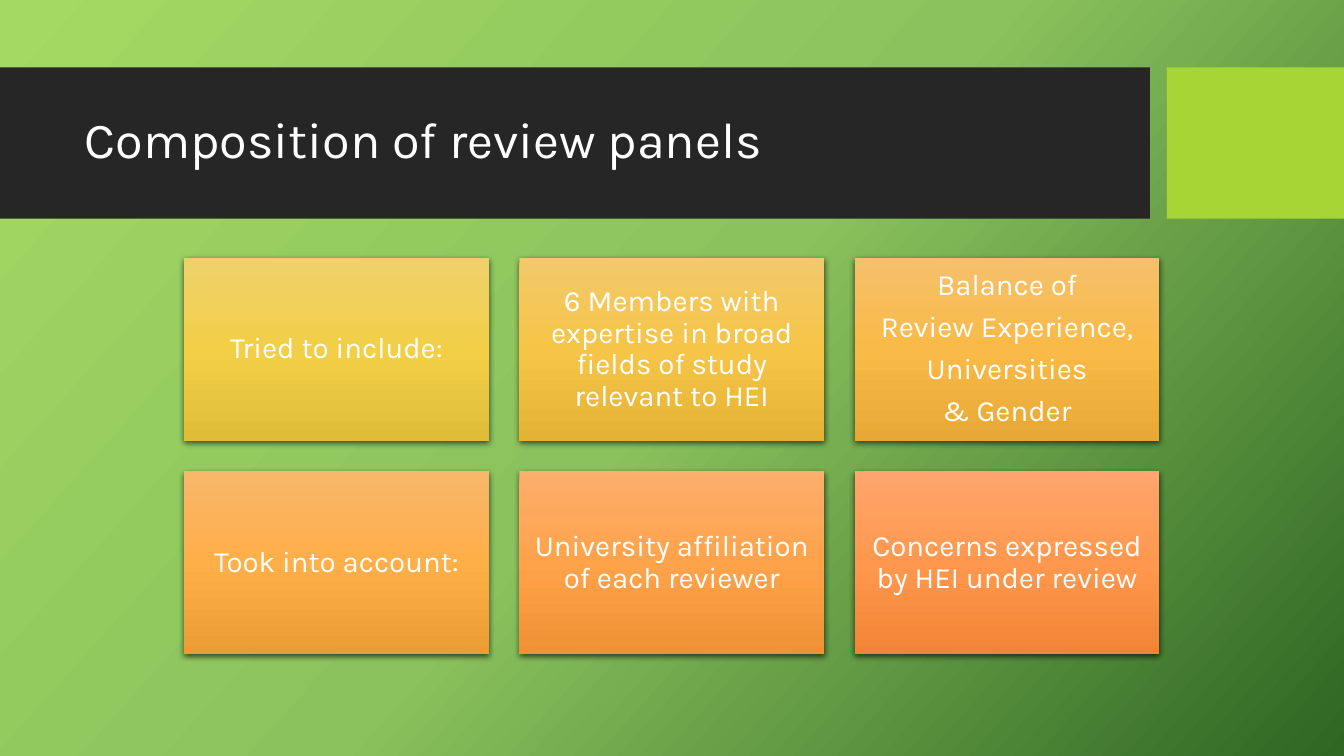
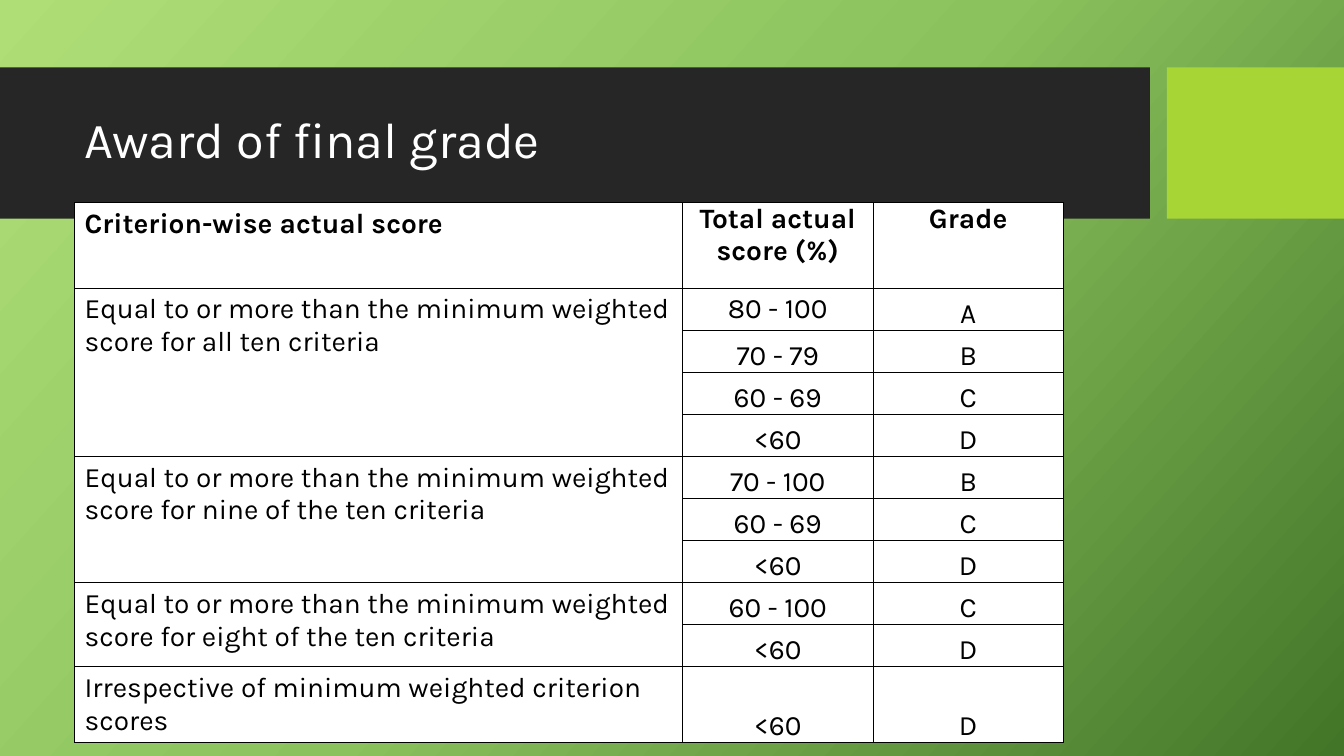
"""Build two slides on how review panels are composed and final grades awarded."""
from copy import deepcopy
from dataclasses import dataclass
from typing import NamedTuple

from lxml import etree
from pptx import Presentation
from pptx import util as u
from pptx.dml import color
from pptx.enum import shapes, text
from pptx.oxml import ns


@dataclass(frozen=True)
class TextStyle:
    size: int
    colour: str
    align: text.PP_ALIGN = text.PP_ALIGN.LEFT
    bold: bool = False
    line_spacing: float = 1.0
    space_after: float = 0


@dataclass(frozen=True)
class Theme:
    font: str = "Karla"
    band: str = "262626"
    accent: str = "A7D535"
    white: str = "FFFFFF"
    black: str = "000000"
    title_size: int = 36
    card_size: int = 21
    table_size: int = 20


class Area(NamedTuple):
    left: float
    top: float
    width: float
    height: float

    def lengths(self) -> tuple[u.Length, ...]:
        return tuple(u.Cm(value) for value in self)


class Gradient(NamedTuple):
    start: str
    middle: str
    end: str


class Card(NamedTuple):
    words: str
    gradient: Gradient


class Criterion(NamedTuple):
    words: str
    grades: tuple[tuple[str, str], ...]


THEME = Theme()
TITLE = TextStyle(THEME.title_size, THEME.white, line_spacing=0.9)
CARD = TextStyle(THEME.card_size, THEME.white, text.PP_ALIGN.CENTER, line_spacing=0.9, space_after=7.35)
HEADER = TextStyle(THEME.table_size, THEME.black, bold=True)
HEADER_CENTRED = TextStyle(THEME.table_size, THEME.black, text.PP_ALIGN.CENTER, bold=True)
BODY = TextStyle(THEME.table_size, THEME.black)
BODY_CENTRED = TextStyle(THEME.table_size, THEME.black, text.PP_ALIGN.CENTER)

TITLE_AREA = Area(1.88, 2.08, 26.7, 3)
BANDS = (
    (Area(0, 1.7, 28.98, 3.81), THEME.band),
    (Area(29.41, 1.7, 4.46, 3.81), THEME.accent),
)
FIRST_CARD = Area(4.64, 6.5, 7.68, 4.61)
CARD_GAP = 0.77
CARD_COLUMNS = 3
CARD_INSET = 0.23
CARDS = (
    Card("Tried to include:", Gradient("EED16B", "F2CF47", "E0BD37")),
    Card(
        "6 Members with expertise in broad fields of study relevant to HEI",
        Gradient("F2C96B", "F6C547", "E4B336"),
    ),
    Card("Balance of\nReview Experience,\nUniversities\n& Gender", Gradient("F5C06B", "FABA47", "E8A836")),
    Card("Took into account:", Gradient("F9B76B", "FEAF47", "EB9D35")),
    Card("University affiliation of each reviewer", Gradient("FCAE6C", "FFA34A", "EF9135")),
    Card("Concerns expressed by HEI under review", Gradient("FFA56D", "FF984E", "F28435")),
)

HEADINGS = ("Criterion-wise actual score", "Total actual score (%)", "Grade")
CRITERIA = (
    Criterion(
        "Equal to or more than the minimum weighted score for all ten criteria",
        (("80 - 100", "A"), ("70 - 79", "B"), ("60 - 69", "C"), ("<60", "D")),
    ),
    Criterion(
        "Equal to or more than the minimum weighted score for nine of the ten criteria",
        (("70 - 100", "B"), ("60 - 69", "C"), ("<60", "D")),
    ),
    Criterion(
        "Equal to or more than the minimum weighted score for eight of the ten criteria",
        (("60 - 100", "C"), ("<60", "D")),
    ),
    Criterion("Irrespective of minimum weighted criterion scores", (("<60", "D"),)),
)
GRADE_ROWS = sum(len(criterion.grades) for criterion in CRITERIA)
COLUMN_WIDTHS = (15.32, 4.8, 4.8)
ROW_HEIGHTS = (2.16, *[1.06] * (GRADE_ROWS - 1), 1.9)
TABLE_AREA = Area(1.88, 5.1, sum(COLUMN_WIDTHS), sum(ROW_HEIGHTS))


def rgb(value: str) -> color.RGBColor:
    return color.RGBColor.from_string(value)


def write(frame, words: str, style: TextStyle) -> None:
    frame.text = words
    for para in frame.paragraphs:
        para.alignment = style.align
        para.line_spacing = style.line_spacing
        para.space_after = u.Pt(style.space_after)
        para.font.name = THEME.font
        para.font.size = u.Pt(style.size)
        para.font.bold = style.bold
        para.font.color.rgb = rgb(style.colour)


def set_margins(owner, side: float, end: float) -> None:
    owner.margin_left = owner.margin_right = u.Cm(side)
    owner.margin_top = owner.margin_bottom = u.Cm(end)


def fill_gradient(fill, owner, gradient: Gradient, clockwise: int) -> None:
    fill.gradient()
    fill.gradient_angle = 360 - clockwise
    stop_list = next(owner.iter(ns.qn("a:gsLst")))
    stop_list.insert(1, deepcopy(stop_list[0]))
    for index, (stop, value) in enumerate(zip(fill.gradient_stops, gradient)):
        stop.position = index / 2
        stop.color.rgb = rgb(value)


def add_box(page, area: Area):
    box = page.shapes.add_shape(shapes.MSO_SHAPE.RECTANGLE, *area.lengths())
    box.shadow.inherit = False
    box.line.fill.background()
    return box


def add_page(deck, title: str, background: Gradient):
    page = deck.slides.add_slide(deck.slide_layouts[5])
    fill_gradient(page.background.fill, page.element, background, 42)
    heading = page.shapes.title
    for area, colour in BANDS:
        band = add_box(page, area)
        band.fill.solid()
        band.fill.fore_color.rgb = rgb(colour)
        heading.element.addprevious(band.element)
    heading.left, heading.top, heading.width, heading.height = TITLE_AREA.lengths()
    heading.text_frame.vertical_anchor = text.MSO_ANCHOR.MIDDLE
    write(heading.text_frame, title, TITLE)
    return page


def add_shadow(box) -> None:
    effects = box.element.spPr.find(ns.qn("a:effectLst"))
    shadow = etree.SubElement(
        effects,
        ns.qn("a:outerShdw"),
        blurRad=str(u.Pt(4.5)),
        dist=str(u.Pt(1.5)),
        dir="5400000",
        algn="ctr",
        rotWithShape="0",
    )
    tint = etree.SubElement(shadow, ns.qn("a:srgbClr"), val=THEME.black)
    etree.SubElement(tint, ns.qn("a:alpha"), val="63000")


def add_card(page, card: Card, index: int) -> None:
    row, column = divmod(index, CARD_COLUMNS)
    left, top, width, height = FIRST_CARD
    area = Area(left + column * (width + CARD_GAP), top + row * (height + CARD_GAP), width, height)
    box = add_box(page, area)
    fill_gradient(box.fill, box.element, card.gradient, 90)
    add_shadow(box)
    frame = box.text_frame
    frame.word_wrap = True
    frame.vertical_anchor = text.MSO_ANCHOR.MIDDLE
    set_margins(frame, CARD_INSET, CARD_INSET)
    write(frame, card.words, CARD)


def format_cell(cell) -> None:
    properties = cell._tc.get_or_add_tcPr()
    for side in ("a:lnL", "a:lnR", "a:lnT", "a:lnB"):
        line = etree.SubElement(properties, ns.qn(side), w=str(u.Pt(0.5)))
        fill = etree.SubElement(line, ns.qn("a:solidFill"))
        etree.SubElement(fill, ns.qn("a:srgbClr"), val=THEME.black)
    cell.fill.solid()
    cell.fill.fore_color.rgb = rgb(THEME.white)


def write_centred(cell, words: str, style: TextStyle, anchor: text.MSO_ANCHOR) -> None:
    set_margins(cell, 0, 0)
    cell.vertical_anchor = anchor
    write(cell.text_frame, words, style)


def add_grade_table(page) -> None:
    frame = page.shapes.add_table(len(ROW_HEIGHTS), len(COLUMN_WIDTHS), *TABLE_AREA.lengths())
    table = frame.table
    table.first_row = table.horz_banding = False
    for column, width in zip(table.columns, COLUMN_WIDTHS):
        column.width = u.Cm(width)
    for row, height in zip(table.rows, ROW_HEIGHTS):
        row.height = u.Cm(height)
    for cell in table.iter_cells():
        format_cell(cell)

    write(table.cell(0, 0).text_frame, HEADINGS[0], HEADER)
    for column in (1, 2):
        write_centred(table.cell(0, column), HEADINGS[column], HEADER_CENTRED, text.MSO_ANCHOR.TOP)
    first = 1
    for criterion in CRITERIA:
        last = first + len(criterion.grades) - 1
        label = table.cell(first, 0)
        if last > first:
            label.merge(table.cell(last, 0))
        else:
            label.vertical_anchor = text.MSO_ANCHOR.BOTTOM
        write(label.text_frame, criterion.words, BODY)
        for row, values in enumerate(criterion.grades, first):
            for column, words in enumerate(values, 1):
                write_centred(table.cell(row, column), words, BODY_CENTRED, text.MSO_ANCHOR.BOTTOM)
        first = last + 1
    table.cell(1, 1).vertical_anchor = text.MSO_ANCHOR.MIDDLE


def main() -> None:
    deck = Presentation()
    deck.slide_width, deck.slide_height = u.Cm(33.87), u.Cm(19.05)
    panels = add_page(deck, "Composition of review panels", Gradient("A3DA63", "8BC25D", "2E6623"))
    for index, card in enumerate(CARDS):
        add_card(panels, card, index)
    grades = add_page(deck, "Award of final grade", Gradient("AFDE77", "8BC25D", "437528"))
    add_grade_table(grades)
    deck.save("out.pptx")


if __name__ == "__main__":
    main()
